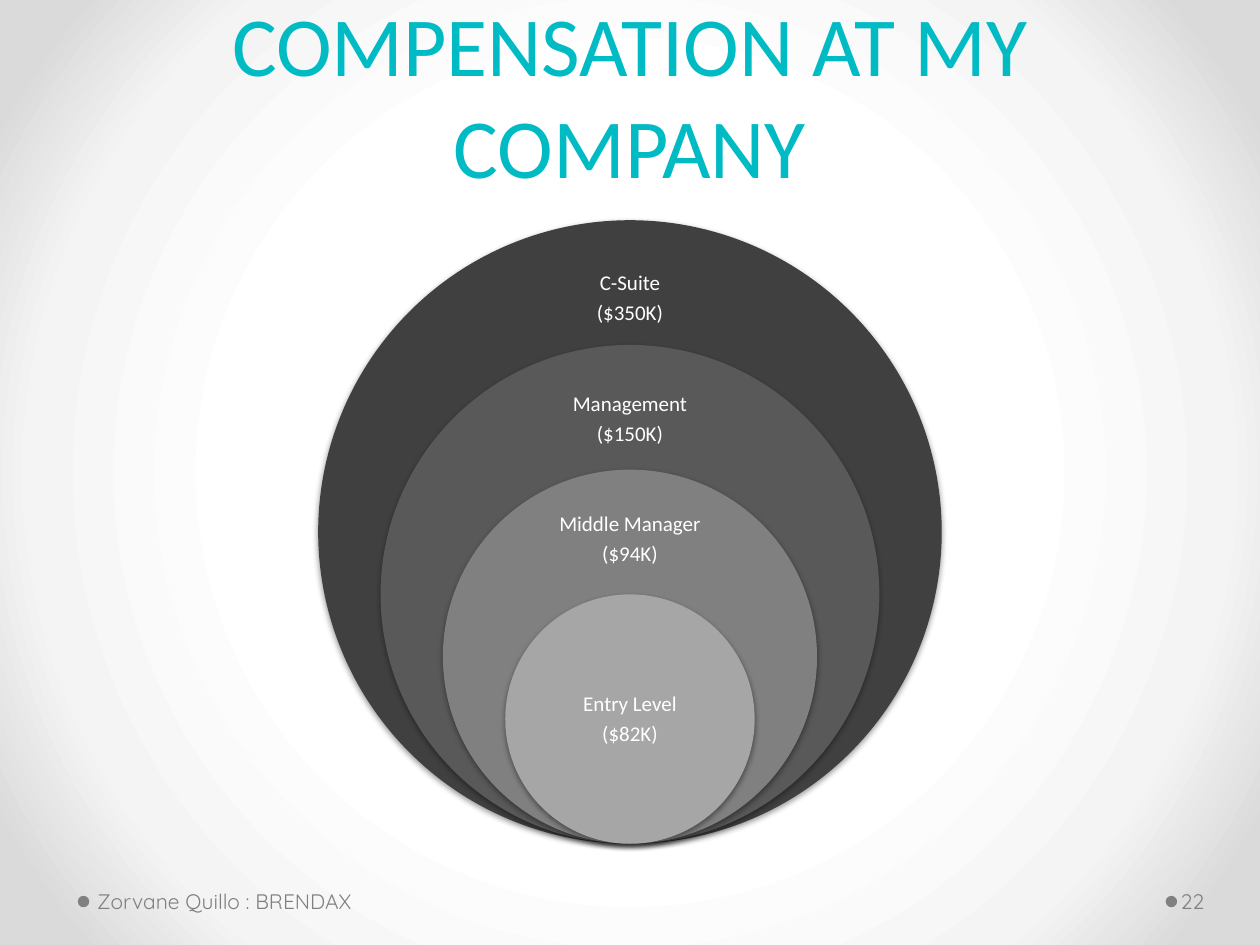
from dataclasses import dataclass

from pptx import Presentation
from pptx import oxml
from pptx.dml.color import RGBColor
from pptx.enum import shapes, text
from pptx.oxml import ns
from pptx.util import Cm, Pt

TEAL = RGBColor(0x00, 0xBA, 0xC4)
WHITE = RGBColor(0xFF, 0xFF, 0xFF)
GRAY = RGBColor(0x80, 0x80, 0x80)
CHARCOAL = RGBColor(0x40, 0x40, 0x40)
DARK_GRAY = RGBColor(0x59, 0x59, 0x59)
LIGHT_GRAY = RGBColor(0xA6, 0xA6, 0xA6)

SLIDE_WIDTH, SLIDE_HEIGHT = 25.4, 19.05
RING_STEP = 12.57 / 5
RINGS_BOTTOM = 17.01
LABEL_WIDTH, LABEL_HEIGHT = 5, 1.4
FOOTER_TOP, FOOTER_HEIGHT = 17.65, 1.02
DOT_TOP, DOT_SIZE = 18.06, 0.23

BACKGROUND_STOPS = ((50, "FFFFFF"), (76, "F4F4F4"), (92, "DADADA"))


@dataclass(frozen=True)
class Ring:
    level: str
    pay: str
    steps: int
    fill: RGBColor
    label_offset: float  # cm from the ring's top to the middle of its label


@dataclass(frozen=True)
class FooterItem:
    wording: str
    dot_left: float
    left: float
    width: float
    left_margin: float


RINGS = (
    Ring("C-Suite", "($350K)", 5, CHARCOAL, 1.59),
    Ring("Management", "($150K)", 4, DARK_GRAY, 1.51),
    Ring("Middle Manager", "($94K)", 3, GRAY, 1.42),
    Ring("Entry Level", "($82K)", 2, LIGHT_GRAY, 2.53),
)

FOOTER = (
    FooterItem("Zorvane Quillo : BRENDAX", 1.57, 1.83, 7.9, 0.13),
    FooterItem("22", 23.5, 23.72, 1.55, 0.08),
)


def apply(target, values: dict) -> None:
    for attribute, value in values.items():
        setattr(target, attribute, value)


def style_font(font, name: str, size: float, color: RGBColor) -> None:
    apply(font, {"name": name, "size": Pt(size), "bold": False})
    font.color.rgb = color


def paint_background(slide) -> None:
    """Fill the background with a gradient spreading from the middle."""
    slide.background.fill.solid()
    solid = next(slide.background._cSld.iter(ns.qn("a:solidFill")))
    stops = "".join(
        f'<a:gs pos="{pos * 1000}"><a:srgbClr val="{color}"/></a:gs>'
        for pos, color in BACKGROUND_STOPS
    )
    gradient = oxml.parse_xml(
        f'<a:gradFill {ns.nsdecls("a")} rotWithShape="1"><a:gsLst>{stops}</a:gsLst>'
        '<a:path path="circle"><a:fillToRect l="50000" t="50000" r="50000" b="50000"/>'
        "</a:path></a:gradFill>"
    )
    solid.getparent().replace(solid, gradient)


def add_title(slide, wording: str) -> None:
    title = slide.shapes.title
    apply(title, {"left": Cm(1.27), "top": Cm(0.38), "width": Cm(22.86), "height": Cm(3.68)})
    apply(title.text_frame, {
        "text": wording,
        "word_wrap": True,
        "auto_size": text.MSO_AUTO_SIZE.NONE,
        "vertical_anchor": text.MSO_ANCHOR.BOTTOM,
    })
    heading = title.text_frame.paragraphs[0]
    apply(heading, {"alignment": text.PP_ALIGN.CENTER, "line_spacing": Pt(58)})
    style_font(heading.runs[0].font, "Calibri", 48, TEAL)


def add_circle(slide, left: float, top: float, size: float, fill: RGBColor):
    circle = slide.shapes.add_shape(
        shapes.MSO_SHAPE.OVAL, Cm(left), Cm(top), Cm(size), Cm(size)
    )
    circle.shadow.inherit = False
    circle.fill.solid()
    circle.fill.fore_color.rgb = fill
    circle.line.fill.background()
    return circle


def add_shadow(shape) -> None:
    effects = shape._element.spPr.find(ns.qn("a:effectLst"))
    effects.append(oxml.parse_xml(
        f'<a:outerShdw {ns.nsdecls("a")} blurRad="{Pt(3.1)}" dist="{Pt(1.6)}" '
        'dir="5400000" rotWithShape="0"><a:srgbClr val="000000">'
        '<a:alpha val="38000"/></a:srgbClr></a:outerShdw>'
    ))


def add_text(slide, box: tuple, lines: tuple, margins: dict, font: tuple, layout: dict) -> None:
    frame = slide.shapes.add_textbox(*map(Cm, box)).text_frame
    apply(frame, {"word_wrap": True, "vertical_anchor": text.MSO_ANCHOR.MIDDLE, **margins})
    frame.text = "\n".join(lines)
    for paragraph in frame.paragraphs:
        apply(paragraph, layout)
        style_font(paragraph.runs[0].font, *font)


def add_ring(slide, ring: Ring) -> None:
    size = ring.steps * RING_STEP
    top = RINGS_BOTTOM - size
    add_shadow(add_circle(slide, (SLIDE_WIDTH - size) / 2, top, size, ring.fill))
    label_box = (
        (SLIDE_WIDTH - LABEL_WIDTH) / 2,
        top + ring.label_offset - LABEL_HEIGHT / 2,
        LABEL_WIDTH,
        LABEL_HEIGHT,
    )
    margins = dict.fromkeys(
        ("margin_left", "margin_top", "margin_right", "margin_bottom"), Cm(0)
    )
    layout = {
        "alignment": text.PP_ALIGN.CENTER,
        "line_spacing": 0.9,
        "space_after": Pt(4.2),
    }
    add_text(slide, label_box, (ring.level, ring.pay), margins, ("Calibri", 12, WHITE), layout)


def add_footer_item(slide, item: FooterItem) -> None:
    add_circle(slide, item.dot_left, DOT_TOP, DOT_SIZE, GRAY)
    box = (item.left, FOOTER_TOP, item.width, FOOTER_HEIGHT)
    margins = {"margin_left": Cm(item.left_margin), "margin_right": Cm(0.13)}
    add_text(slide, box, (item.wording,), margins, ("Quicksand", 12, GRAY), {})


def main() -> None:
    presentation = Presentation()
    apply(presentation, {"slide_width": Cm(SLIDE_WIDTH), "slide_height": Cm(SLIDE_HEIGHT)})
    slide = presentation.slides.add_slide(presentation.slide_layouts[5])
    paint_background(slide)
    add_title(slide, "COMPENSATION AT MY COMPANY")
    for ring in RINGS:
        add_ring(slide, ring)
    for item in FOOTER:
        add_footer_item(slide, item)
    presentation.save("out.pptx")


if __name__ == "__main__":
    main()
